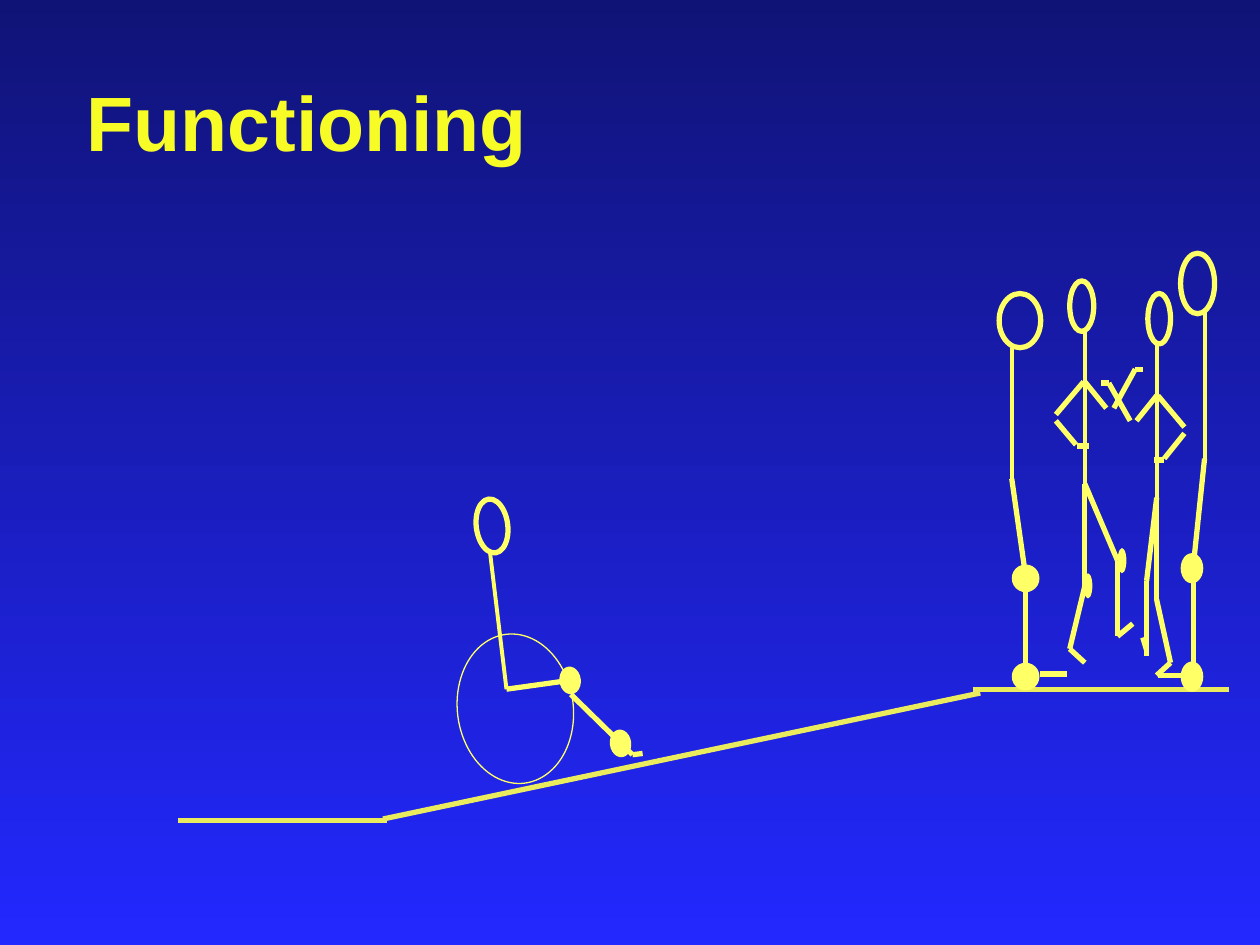
from lxml.etree import SubElement
from pptx import Presentation
from pptx.dml.color import RGBColor
from pptx.enum.shapes import MSO_CONNECTOR, MSO_SHAPE
from pptx.enum.text import MSO_ANCHOR, MSO_AUTO_SIZE, PP_ALIGN
from pptx.oxml.ns import qn
from pptx.util import Inches, Pt

COLUMNS, ROWS = 1000, 750
FIGURE, GROUND, TITLE = "FFFF66", "EAEC5E", "F7FC26"
SKY_TOP, SKY_BOTTOM = "101376", "2328FF"
THIN, SPINE, THICK = 0.75, 2.25, 3


def color(code):
    """Turn a hex string into a colour."""
    return RGBColor.from_string(code)


class Sketch:
    """Draws stick figures on a slide laid out as a fine grid."""

    def __init__(self, deck):
        """Open a title-only page and start drawing on it."""
        self.cell_width = deck.slide_width / COLUMNS
        self.cell_height = deck.slide_height / ROWS
        self.page = deck.slides.add_slide(deck.slide_layouts[5])
        self.canvas = self.page.shapes

    def place(self, *cells):
        """Convert alternating columns and rows to lengths."""
        units = (self.cell_width, self.cell_height)
        return [round(cell * units[index % 2]) for index, cell in enumerate(cells)]

    def backdrop(self, top, bottom):
        """Fill the page with a vertical gradient."""
        fill = self.page.background.fill
        fill.gradient()
        fill.gradient_angle = 270
        for stop, code, position in zip(fill.gradient_stops, (top, bottom), (0, 1)):
            stop.color.rgb = color(code)
            stop.position = position

    def title(self, text, *cells):
        """Move and format the title placeholder."""
        box = self.page.shapes.title
        box.left, box.top, box.width, box.height = self.place(*cells)
        frame = box.text_frame
        frame.word_wrap = True
        frame.auto_size = MSO_AUTO_SIZE.NONE
        frame.vertical_anchor = MSO_ANCHOR.MIDDLE
        para = frame.paragraphs[0]
        para.alignment = PP_ALIGN.LEFT
        span = para.add_run()
        span.text = text
        span.font.name, span.font.size, span.font.bold = "Arial", Pt(44), True
        span.font.color.rgb = color(TITLE)

    def figure(self):
        """Collect the following elements in a group."""
        self.canvas = self.page.shapes.add_group_shape().shapes

    def scenery(self):
        """Return to drawing directly on the page."""
        self.canvas = self.page.shapes

    def strokes(self, *points, weight=THICK, code=FIGURE):
        """Join consecutive points with straight lines."""
        for start, end in zip(points, points[1:]):
            line = self.canvas.add_connector(
                MSO_CONNECTOR.STRAIGHT, *self.place(*start, *end))
            line.line.color.rgb = color(code)
            line.line.width = Pt(weight)
            SubElement(line._element.spPr, qn("a:effectLst"))

    def oval(self, *cells, weight=THICK, turn=0):
        """Add an outlined oval, or a solid one when weight is zero."""
        shape = self.canvas.add_shape(MSO_SHAPE.OVAL, *self.place(*cells))
        shape.shadow.inherit = False
        shape.rotation = turn
        if weight:
            shape.fill.background()
            shape.line.color.rgb = color(FIGURE)
            shape.line.width = Pt(weight)
        else:
            shape.fill.solid()
            shape.fill.fore_color.rgb = color(FIGURE)
            shape.line.fill.background()

    def joints(self, width, height, *corners, turn=0):
        """Add solid ovals of one size."""
        for corner in corners:
            self.oval(*corner, width, height, weight=0, turn=turn)


def wheelchair_user(sketch):
    """Draw the person in the wheelchair."""
    lean = 352.8
    sketch.strokes((389, 439), (402, 547), weight=SPINE)
    sketch.strokes((402, 547), (452, 540))
    sketch.strokes((453, 551), (502, 599), (510, 598))
    sketch.oval(378, 396, 25, 43, turn=lean)
    sketch.oval(363, 503, 92, 119, weight=THIN, turn=lean)
    sketch.joints(17, 22, (484, 579), (444, 529), turn=lean)


def right_bystander(sketch):
    """Draw the tall person at the right edge."""
    sketch.strokes((956, 248), (956, 367), weight=SPINE)
    sketch.oval(937, 201, 27, 48)
    sketch.strokes((956, 364), (947, 450), (947, 536))
    sketch.strokes((937, 536), (919, 536))
    sketch.joints(18, 24, (937, 439), (937, 525))


def left_walker(sketch):
    """Draw the walking person facing right."""
    sketch.joints(7, 20, (860, 455), (887, 435))
    sketch.strokes((861, 303), (878, 324))
    sketch.strokes((861, 384), (887, 445), (887, 505), (899, 495))
    sketch.strokes((838, 334), (854, 353))
    sketch.strokes((861, 263), (861, 384), weight=SPINE)
    sketch.oval(849, 223, 19, 40)
    sketch.strokes((884, 324), (901, 293), (907, 293))
    sketch.strokes((861, 384), (861, 465), (849, 515), (861, 526))
    sketch.strokes((860, 303), (838, 329))
    sketch.strokes((864, 354), (855, 354))


def left_bystander(sketch):
    """Draw the person standing at the top of the ramp."""
    sketch.strokes((803, 276), (803, 383), weight=SPINE)
    sketch.oval(793, 233, 33, 43)
    sketch.strokes((803, 380), (814, 457), (814, 535))
    sketch.strokes((825, 535), (847, 535))
    sketch.joints(22, 22, (803, 448), (803, 526))


def right_walker(sketch):
    """Draw the walking person facing left."""
    sketch.strokes((918, 314), (902, 334))
    sketch.strokes((940, 344), (924, 364))
    sketch.strokes((918, 274), (918, 395), weight=SPINE)
    sketch.oval(911, 233, 18, 40)
    sketch.strokes((897, 334), (880, 304), (874, 304))
    sketch.strokes((918, 395), (918, 476), (929, 526), (918, 536))
    sketch.strokes((918, 395), (910, 461), (910, 521))
    sketch.strokes((910, 516), (907, 506))
    sketch.strokes((919, 314), (940, 339))
    sketch.strokes((916, 365), (924, 365))


def main():
    """Build the slide and save it."""
    deck = Presentation()
    deck.slide_width, deck.slide_height = Inches(10), Inches(7.5)
    sketch = Sketch(deck)
    sketch.backdrop(SKY_TOP, SKY_BOTTOM)
    sketch.title("Functioning", 59, 33, 889, 125)
    sketch.strokes((772, 547), (975, 547), code=GROUND)
    sketch.strokes((141, 651), (307, 651), code=GROUND)
    for draw in (wheelchair_user, right_bystander, left_walker,
                 left_bystander, right_walker):
        sketch.figure()
        draw(sketch)
    sketch.scenery()
    sketch.strokes((304, 650), (778, 550), code=GROUND)
    deck.save("out.pptx")


if __name__ == "__main__":
    main()
